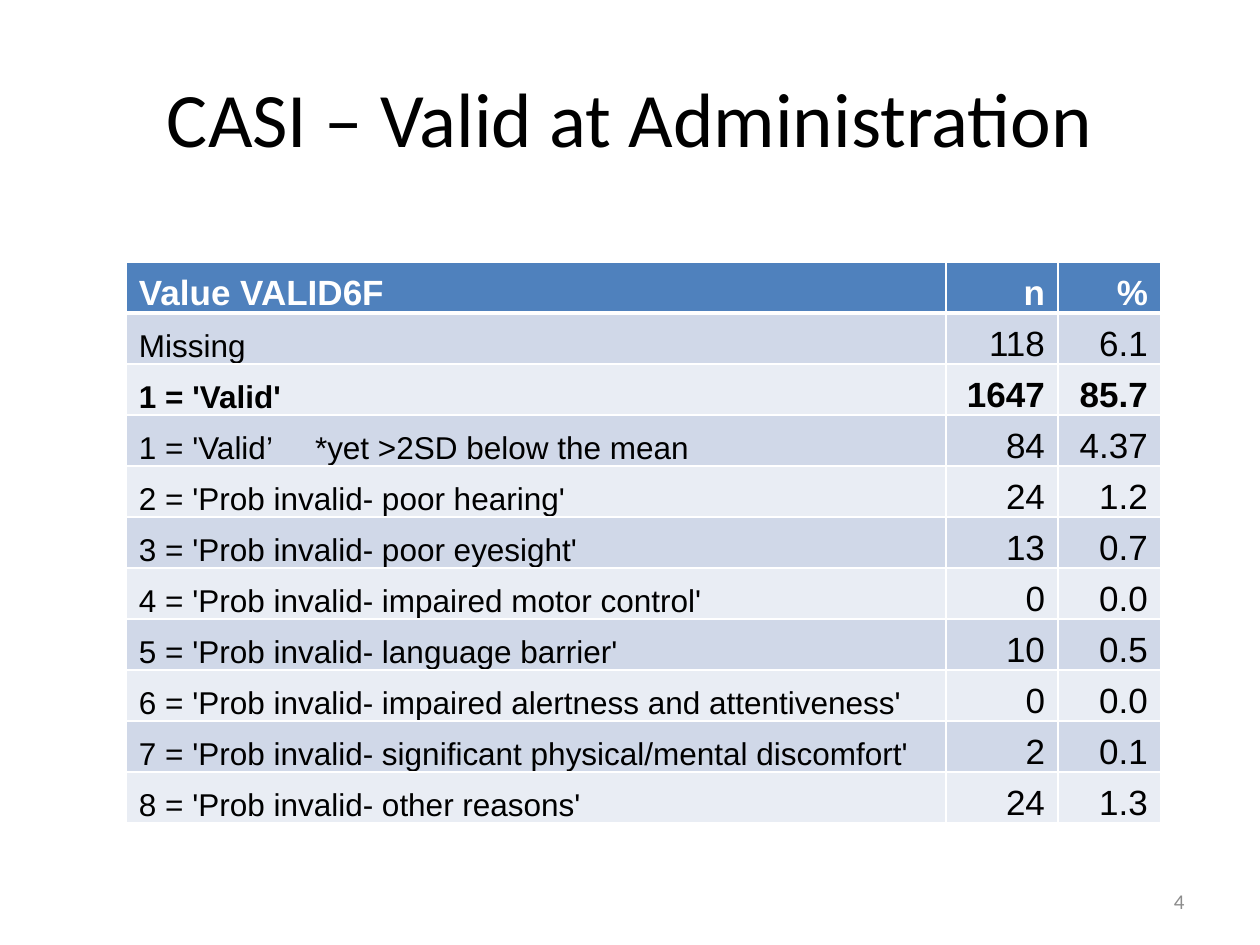
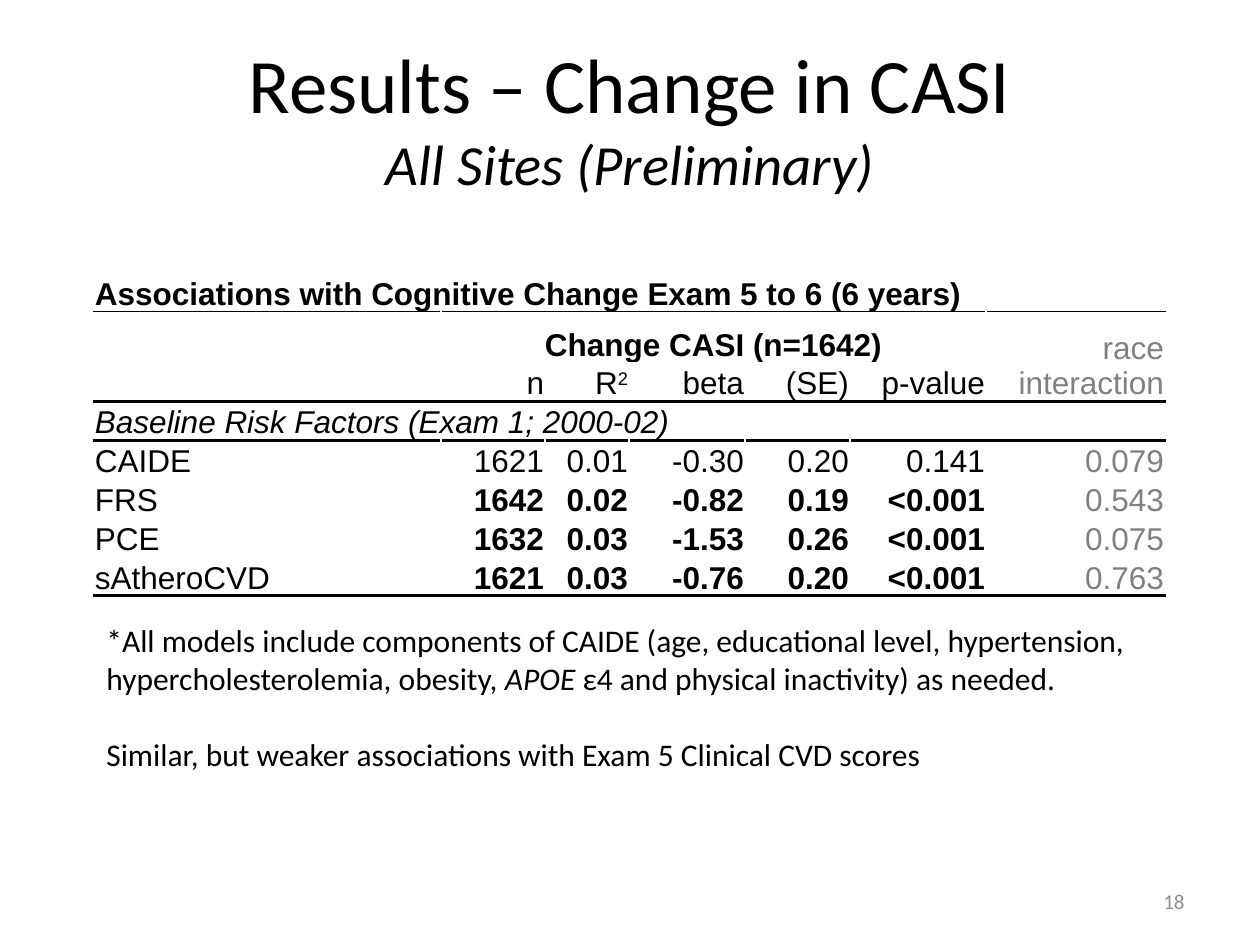
"""Build two slides on CASI validity and change, each with a table."""
from dataclasses import dataclass

import pptx
import pptx.dml.color
import pptx.enum.text
import pptx.oxml.ns
import pptx.oxml.xmlchemy
import pptx.slide
import pptx.table
import pptx.text.text
import pptx.util
from lxml import etree

RGBColor = pptx.dml.color.RGBColor
BLACK = RGBColor(0x00, 0x00, 0x00)
WHITE = RGBColor(0xFF, 0xFF, 0xFF)
GRAY = RGBColor(0x80, 0x80, 0x80)
NUMBER_GRAY = RGBColor(0x8C, 0x8C, 0x8C)
HEADER_BLUE = RGBColor(0x4F, 0x81, 0xBD)
BANDS = (RGBColor(0xE9, 0xED, 0xF4), RGBColor(0xD0, 0xD8, 0xE8))

LEFT = pptx.enum.text.PP_ALIGN.LEFT
CENTER = pptx.enum.text.PP_ALIGN.CENTER
RIGHT = pptx.enum.text.PP_ALIGN.RIGHT
MIDDLE = pptx.enum.text.MSO_ANCHOR.MIDDLE
TOP = pptx.enum.text.MSO_ANCHOR.TOP
BOTTOM = pptx.enum.text.MSO_ANCHOR.BOTTOM

PX_PER_INCH = 126
EDGES = ("L", "R", "T", "B")


@dataclass(frozen=True)
class Box:
    """Place of an object in px."""
    left: int
    top: int
    width: int
    height: int


@dataclass(frozen=True)
class Style:
    """Look of a paragraph."""
    size: float = 18
    font: str = "Arial"
    color: RGBColor = BLACK
    bold: bool = False
    italic: bool = False
    align: int = LEFT


@dataclass(frozen=True)
class Entry:
    """Text of one table cell with its style."""
    text: str
    style: Style


@dataclass(frozen=True)
class Rule:
    """Line on a cell edge, width in points."""
    color: RGBColor
    width: float


TITLE_BOX = Box(63, 38, 1134, 157)
NUMBER_BOX = Box(903, 876, 294, 50)
NOTES_BOX = Box(94, 615, 1071, 165)
TITLE = Style(44, "Calibri", align=CENTER)
NUMBER = Style(12, "Calibri", NUMBER_GRAY, align=RIGHT)
NOTE = Style(18, "Calibri")
LABEL = Style()
FIGURE = Style(align=RIGHT)
BOLD_FIGURE = Style(bold=True, align=RIGHT)
GRAY_FIGURE = Style(color=GRAY, align=RIGHT)

VALIDITY = (
    ("Missing", "118", "6.1"),
    ("1 = 'Valid'", "1647", "85.7"),
    ("1 = 'Valid’\t*yet >2SD below the mean", "84", "4.37"),
    ("2 = 'Prob invalid- poor hearing'", "24", "1.2"),
    ("3 = 'Prob invalid- poor eyesight'", "13", "0.7"),
    ("4 = 'Prob invalid- impaired motor control'", "0", "0.0"),
    ("5 = 'Prob invalid- language barrier'", "10", "0.5"),
    ("6 = 'Prob invalid- impaired alertness and attentiveness'", "0", "0.0"),
    ("7 = 'Prob invalid- significant physical/mental discomfort'", "2", "0.1"),
    ("8 = 'Prob invalid- other reasons'", "24", "1.3"),
)
VALID_ROW = 2
YET_ROW = 3
YET_TAB = 176

RISK_SCORES = (
    ("CAIDE", "1621", "0.01", "-0.30", "0.20", "0.141", "0.079"),
    ("FRS", "1642", "0.02", "-0.82", "0.19", "<0.001", "0.543"),
    ("PCE", "1632", "0.03", "-1.53", "0.26", "<0.001", "0.075"),
    ("sAtheroCVD", "1621", "0.03", "-0.76", "0.20", "<0.001", "0.763"),
)
NOT_SIGNIFICANT = "CAIDE"


def px(length: int) -> pptx.util.Emu:
    """Turn px into EMU."""
    return pptx.util.Emu(round(length * 914400 / PX_PER_INCH))


def style_paragraph(paragraph: pptx.text.text._Paragraph, style: Style) -> None:
    """Give a paragraph its alignment and font."""
    paragraph.alignment = style.align
    font = paragraph.font
    font.size = pptx.util.Pt(style.size)
    font.name = style.font
    font.bold = style.bold
    font.italic = style.italic
    font.color.rgb = style.color


def add_text(slide: pptx.slide.Slide, box: Box, text: str, style: Style,
             anchor: int = MIDDLE) -> pptx.text.text.TextFrame:
    """Add a wrapping text box with one paragraph."""
    frame = slide.shapes.add_textbox(
        px(box.left), px(box.top), px(box.width), px(box.height)).text_frame
    frame.word_wrap = True
    frame.vertical_anchor = anchor
    frame.paragraphs[0].text = text
    style_paragraph(frame.paragraphs[0], style)
    return frame


def add_page(deck: pptx.presentation.Presentation, title: str,
             number: str) -> tuple[pptx.slide.Slide, pptx.text.text._Paragraph]:
    """Add a blank slide with title and slide number."""
    slide = deck.slides.add_slide(deck.slide_layouts[6])
    heading = add_text(slide, TITLE_BOX, title, TITLE).paragraphs[0]
    add_text(slide, NUMBER_BOX, number, NUMBER)
    return slide, heading


def add_grid(slide: pptx.slide.Slide, left: int, top: int,
             widths: list[int], heights: list[int]) -> pptx.table.Table:
    """Add an unstyled table with the given columns and rows."""
    table = slide.shapes.add_table(
        len(heights), len(widths), px(left), px(top),
        px(sum(widths)), px(sum(heights))).table
    table.first_row = False
    table.horz_banding = False
    for column, width in zip(table.columns, widths):
        column.width = px(width)
    for row, height in zip(table.rows, heights):
        row.height = px(height)
    return table


def set_edges(cell: pptx.table._Cell, rules: dict[str, Rule | None]) -> None:
    """Draw the given edges of a cell."""
    properties = cell._tc.get_or_add_tcPr()
    drawn = [edge for edge in EDGES if rules.get(edge)]
    for position, edge in enumerate(drawn):
        rule = rules[edge]
        line = etree.Element(pptx.oxml.ns.qn(f"a:ln{edge}"),
                             w=str(pptx.util.Pt(rule.width)))
        fill = etree.SubElement(line, pptx.oxml.ns.qn("a:solidFill"))
        etree.SubElement(fill, pptx.oxml.ns.qn("a:srgbClr"), val=str(rule.color))
        properties.insert(position, line)


def fill_cell(cell: pptx.table._Cell, entry: Entry, inset: int,
              fill: RGBColor | None, rules: dict[str, Rule | None]) -> None:
    """Write a cell with its insets, fill and edges."""
    cell.margin_left = cell.margin_right = px(inset)
    cell.margin_top = px(1)
    cell.margin_bottom = 0
    cell.vertical_anchor = BOTTOM
    if fill is None:
        cell.fill.background()
    else:
        cell.fill.solid()
        cell.fill.fore_color.rgb = fill
    set_edges(cell, rules)
    paragraph = cell.text_frame.paragraphs[0]
    paragraph.text = entry.text
    style_paragraph(paragraph, entry.style)


def validity_style(row: int, column: int) -> Style:
    """Choose the style of a cell of the validity table."""
    header = row == 0
    return Style(size=20 if header or column else 18,
                 color=WHITE if header else BLACK,
                 bold=header or row == VALID_ROW,
                 align=RIGHT if column else LEFT)


def build_validity(deck: pptx.presentation.Presentation) -> None:
    """Build the slide on validity at administration."""
    slide, _ = add_page(deck, "CASI – Valid at Administration", "4")
    rows = (("Value VALID6F", "n", "%"),) + VALIDITY
    table = add_grid(slide, 126, 262, [820, 112, 103], [51] * len(rows))
    thin, thick = Rule(WHITE, 1), Rule(WHITE, 3)
    for r, texts in enumerate(rows):
        rules = {"L": thin, "R": thin, "T": thick if r == 1 else thin,
                 "B": thick if r == 0 else thin}
        fill = BANDS[r % 2] if r else HEADER_BLUE
        for c, text in enumerate(texts):
            fill_cell(table.cell(r, c), Entry(text, validity_style(r, c)),
                      13, fill, rules)
    yet_paragraph = table.cell(YET_ROW, 0).text_frame.paragraphs[0]
    tabs = etree.Element(pptx.oxml.ns.qn("a:tabLst"))
    etree.SubElement(tabs, pptx.oxml.ns.qn("a:tab"), pos=str(px(YET_TAB)), algn="l")
    yet_paragraph._p.get_or_add_pPr().insert(0, tabs)


def change_entries() -> dict[tuple[int, int], Entry]:
    """Collect the filled cells of the change table."""
    entries = {
        (0, 0): Entry("Associations with Cognitive Change Exam 5 to 6 (6 years)",
                      Style(bold=True)),
        (1, 1): Entry("Change CASI (n=1642)", Style(bold=True, align=CENTER)),
        (1, 6): Entry("race interaction", GRAY_FIGURE),
        (3, 0): Entry("Baseline Risk Factors (Exam 1; 2000-02)", Style(italic=True)),
    }
    for c, text in enumerate(("n", "R", "beta", "(SE)", "p-value"), start=1):
        entries[2, c] = Entry(text, FIGURE)
    for r, (score, *figures, interaction) in enumerate(RISK_SCORES, start=4):
        entries[r, 0] = Entry(score, LABEL)
        figure_style = FIGURE if score == NOT_SIGNIFICANT else BOLD_FIGURE
        for c, figure in enumerate(figures, start=1):
            entries[r, c] = Entry(figure, figure_style)
        entries[r, 6] = Entry(interaction, GRAY_FIGURE)
    return entries


def build_change(deck: pptx.presentation.Presentation) -> None:
    """Build the slide on change in CASI."""
    slide, heading = add_page(deck, "Results – Change in CASI", "18")
    heading.add_line_break()
    subtitle = heading.add_run()
    subtitle.text = "All Sites (Preliminary)"
    subtitle.font.size = pptx.util.Pt(32.4)
    subtitle.font.italic = True

    widths = [347, 104, 84, 116, 105, 136, 179]
    heights = [37, 51] + [36] * 6
    table = add_grid(slide, 94, 273, widths, heights)
    for first, last in (((0, 0), (0, 6)), ((1, 1), (1, 5)),
                        ((1, 6), (2, 6)), ((3, 0), (3, 5))):
        table.cell(*first).merge(table.cell(*last))
    rules_below = {0: Rule(BLACK, 0.5), 2: Rule(BLACK, 2), 7: Rule(BLACK, 2)}
    entries = change_entries()
    for r in range(len(heights)):
        for c in range(len(widths)):
            cell = table.cell(r, c)
            rules = {"T": rules_below.get(r - 1),
                     "B": rules_below.get(r + cell.span_height - 1)}
            fill_cell(cell, entries.get((r, c), Entry("", LABEL)), 1, None, rules)
    square = table.cell(2, 2).text_frame.paragraphs[0].add_run()
    square.text = "2"
    square._r.get_or_add_rPr().set("baseline", "30000")

    notes = add_text(
        slide, NOTES_BOX,
        "*All models include components of CAIDE (age, educational level, "
        "hypertension, hypercholesterolemia, obesity, ", NOTE, TOP)
    gene = notes.paragraphs[0].add_run()
    gene.text = "APOE"
    gene.font.italic = True
    notes.paragraphs[0].add_run().text = " ε4 and physical inactivity) as needed."
    similar = notes.add_paragraph()
    similar.text = "Similar, but weaker associations with Exam 5 Clinical CVD scores"
    similar.space_before = pptx.util.Pt(22)
    style_paragraph(similar, NOTE)


def main() -> None:
    """Build and save the deck."""
    deck = pptx.Presentation()
    deck.slide_width, deck.slide_height = px(1260), px(945)
    build_validity(deck)
    build_change(deck)
    deck.save("out.pptx")


if __name__ == "__main__":
    main()
